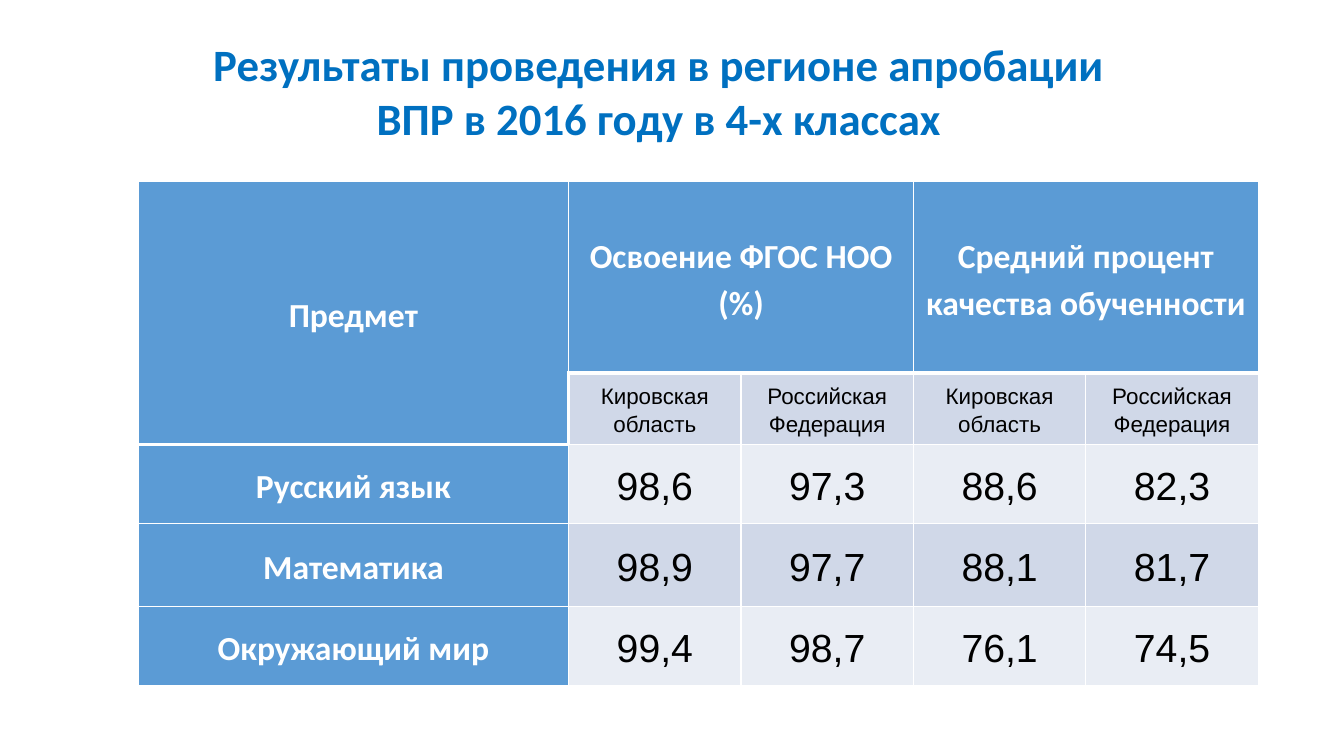
from lxml import etree
from pptx import Presentation
from pptx.dml.color import RGBColor
from pptx.enum.text import MSO_ANCHOR, PP_ALIGN
from pptx.util import Inches, Pt

MIDDLE = MSO_ANCHOR.MIDDLE
CENTER = PP_ALIGN.CENTER
NS = "http://schemas.openxmlformats.org/drawingml/2006/main"
WHITE, BLACK, TITLE = "FFFFFF", "000000", "0070C0"
HEAD, BAND, PALE = "5B9BD5", "D0D8E8", "E9EDF4"


def style(frame, size, font, color, bold):
    para = frame.paragraphs[0]
    para.alignment = CENTER
    for run in para.runs:
        run.font.size = Pt(size)
        run.font.name = font
        run.font.bold = bold
        run.font.color.rgb = RGBColor.from_string(color)


def edge(cell, side, width):
    """Draw a white border on one side (L, R, T or B) of a cell."""
    props = cell._tc.get_or_add_tcPr()
    line = etree.SubElement(props, f"{{{NS}}}ln{side}", w=str(Pt(width)))
    fill = etree.SubElement(line, f"{{{NS}}}solidFill")
    etree.SubElement(fill, f"{{{NS}}}srgbClr", val=WHITE)


prs = Presentation()
prs.slide_width, prs.slide_height = Inches(13.33), Inches(7.5)
slide = prs.slides.add_slide(prs.slide_layouts[6])

title = slide.shapes.add_textbox(
    Inches(1.93), Inches(0.16), Inches(9.21), Inches(1.48)).text_frame
title.word_wrap = True
title.vertical_anchor = MIDDLE
title.text = "Результаты проведения в регионе апробации ВПР в 2016 году в 4-х классах"
style(title, 32, "Calibri", TITLE, True)

areas = ["Кировская область", "Российская Федерация"]
rows = [
    ["Предмет", "Освоение ФГОС НОО (%)", "", "Средний процент качества обученности", ""],
    ["", *areas, *areas],
    ["Русский язык", "98,6", "97,3", "88,6", "82,3"],
    ["Математика", "98,9", "97,7", "88,1", "81,7"],
    ["Окружающий мир", "99,4", "98,7", "76,1", "74,5"],
]
widths = [4.27] + [1.71] * 4
heights = [1.9, 0.71, 0.78, 0.83, 0.78]

table = slide.shapes.add_table(
    len(rows), len(widths), Inches(1.37), Inches(1.8),
    Inches(sum(widths)), Inches(sum(heights))).table
table.first_row = table.horz_banding = False
for col, width in zip(table.columns, widths):
    col.width = Inches(width)
for row, height in zip(table.rows, heights):
    row.height = Inches(height)

for r, texts in enumerate(rows):
    for c, text in enumerate(texts):
        cell = table.cell(r, c)
        cell.text = text
        cell.vertical_anchor = MIDDLE
        cell.margin_left = cell.margin_right = Inches(0.07)
        cell.margin_top = cell.margin_bottom = 0
        cell.text_frame.paragraphs[0].line_spacing = 1.15

        # A thick rule runs below the headings and steps down past the first column
        thick = {
            "L": (r, c) == (1, 1),
            "R": (r, c) == (1, 0),
            "T": r == (1 if c else 2),
            "B": r == 0 or (r, c) == (1, 0),
        }
        for side, wide in thick.items():
            edge(cell, side, 3 if wide else 1)

        cell.fill.solid()
        if r == 0 or c == 0:
            shade = HEAD
            style(cell.text_frame, 24, "Calibri", WHITE, True)
        else:
            shade = BAND if r % 2 else PALE
            style(cell.text_frame, 16 if r == 1 else 28, "Arial", BLACK, False)
        cell.fill.fore_color.rgb = RGBColor.from_string(shade)

table.cell(0, 0).merge(table.cell(1, 0))
for c in (1, 3):
    table.cell(0, c).merge(table.cell(0, c + 1))

prs.save("out.pptx")
